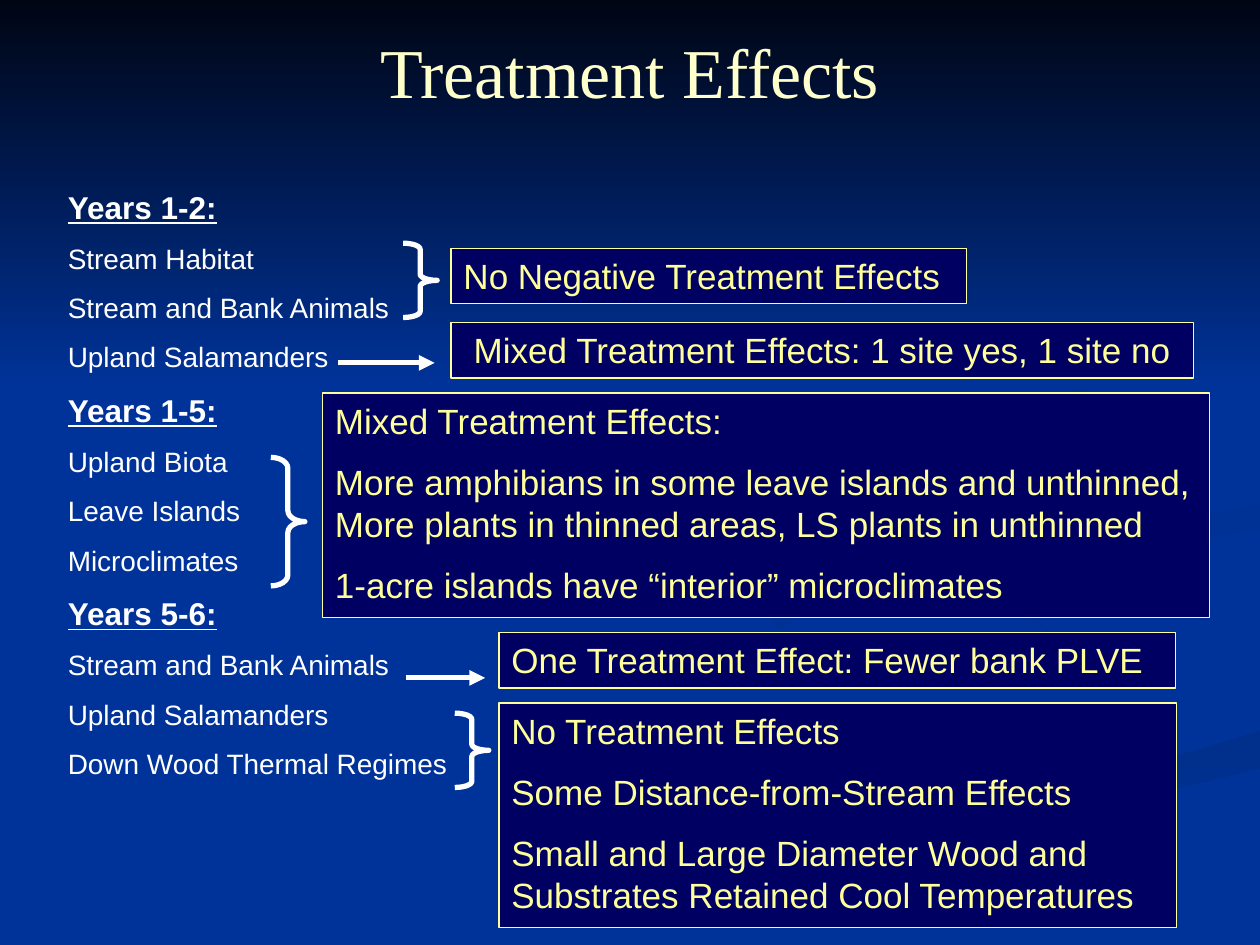
from dataclasses import dataclass

from lxml import etree
from pptx import Presentation
from pptx.dml.color import RGBColor
from pptx.enum.shapes import MSO_CONNECTOR as Link, MSO_SHAPE as Shape
from pptx.enum.text import MSO_ANCHOR as Anchor, PP_ALIGN as Align
from pptx.oxml.ns import qn
from pptx.util import Inches, Pt

BLUE, NAVY, WHITE = "003399", "000062", "FFFFFF"
CREAM, YELLOW = "FFFFCC", "FFFF99"


@dataclass
class Wave:
    start: str
    angle: int
    points: list


@dataclass
class Note:
    left: float
    top: float
    width: float
    height: float
    lines: list
    pad: float = 0.1


@dataclass
class Brace:
    left: float
    top: float
    height: float
    curve: float


@dataclass
class Arrow:
    left: float
    right: float
    y: float


@dataclass
class Group:
    head: str
    items: list


# Each wave fades from its start colour into the background blue
WAVES = [
    Wave("002F8C", 90, [(5, 7.5), (5.7, 7.5), (7.5, 6.7), (10, 6.1),
                        (10, 5.8), (8, 6.4), (6.3, 6.9)]),
    Wave("003091", 45, [(7.8, 4.6), (8.3, 5), (8.1, 4.7), (8.8, 4.4),
                        (10, 4.2), (10, 4), (8.5, 4.3)]),
    Wave("002F8E", 45, [(6.8, 4.3), (8.4, 4), (8.9, 3.4), (7.6, 2.3),
                        (8.9, 3.3), (8.4, 3.8), (5.8, 4.6), (6.2, 5)]),
    Wave("000514", 90, [(0, 0), (0, 3.08), (10, 3.08), (10, 0)]),
]

GROUPS = [
    Group("Years 1-2:", ["Stream Habitat", "Stream and Bank Animals",
                         "Upland Salamanders"]),
    Group("Years 1-5:", ["Upland Biota", "Leave Islands", "Microclimates"]),
    Group("Years 5-6:", ["Stream and Bank Animals", "Upland Salamanders",
                         "Down Wood Thermal Regimes"]),
]

LOW, TALL = 0.44, 1.78
NOTES = [
    Note(3.58, 1.97, 4.09, LOW, ["No Negative Treatment Effects"]),
    Note(3.58, 2.56, 5.89, LOW,
         ["Mixed Treatment Effects: 1 site yes, 1 site no"], 0.18),
    Note(2.56, 3.12, 7.04, TALL, [
        "Mixed Treatment Effects:",
        "More amphibians in some leave islands and unthinned, "
        "More plants in thinned areas, LS plants in unthinned",
        "1-acre islands have “interior” microclimates"]),
    Note(3.96, 5.02, 5.37, LOW, ["One Treatment Effect: Fewer bank PLVE"]),
    Note(3.96, 5.58, 5.38, TALL, [
        "No Treatment Effects",
        "Some Distance-from-Stream Effects",
        "Small and Large Diameter Wood and "
        "Substrates Retained Cool Temperatures"]),
]
BRACES = [Brace(3.2, 1.93, 0.59, 0.18), Brace(3.61, 5.66, 0.59, 0.18),
          Brace(2.15, 3.63, 1.02, 0.32)]
ARROWS = [Arrow(2.68, 3.45, 2.88), Arrow(3.22, 3.85, 5.38)]


def rgb(code: str) -> RGBColor:
    return RGBColor.from_string(code)


def stroke(shape, code: str, width: float) -> None:
    shape.line.color.rgb = rgb(code)
    shape.line.width = Pt(width)


def write(frame, index: int, text: str, size: int, code: str,
          face: str = "Arial", bold: bool = False):
    para = frame.add_paragraph() if index else frame.paragraphs[0]
    para.text = text
    para.alignment = Align.LEFT
    para.space_before = Pt(round(size * 0.55) if index else 0)
    font = para.font
    font.name, font.size, font.bold = face, Pt(size), bold
    font.underline = bold
    font.color.rgb = rgb(code)
    return para


def draw_wave(slide, wave: Wave) -> None:
    first, *rest = [(Inches(x), Inches(y)) for x, y in wave.points]
    pen = slide.shapes.build_freeform(*first)
    pen.add_line_segments(rest, close=True)
    shape = pen.convert_to_shape()
    shape.shadow.inherit = False
    shape.line.fill.background()
    shape.fill.gradient()
    shape.fill.gradient_angle = -wave.angle % 360
    for place, code in enumerate((wave.start, BLUE)):
        stop = shape.fill.gradient_stops[place]
        stop.color.rgb, stop.position = rgb(code), place


def draw_note(slide, note: Note) -> None:
    box = slide.shapes.add_shape(
        Shape.RECTANGLE, Inches(note.left), Inches(note.top),
        Inches(note.width), Inches(note.height))
    box.shadow.inherit = False
    box.fill.solid()
    box.fill.fore_color.rgb = rgb(NAVY)
    stroke(box, YELLOW, 0.75)
    frame = box.text_frame
    frame.word_wrap, frame.vertical_anchor = True, Anchor.TOP
    frame.margin_left = Inches(note.pad)
    for i, line in enumerate(note.lines):
        write(frame, i, line, 20, YELLOW)


def draw_brace(slide, brace: Brace) -> None:
    shape = slide.shapes.add_shape(
        Shape.RIGHT_BRACE, Inches(brace.left), Inches(brace.top),
        Inches(0.27), Inches(brace.height))
    shape.adjustments[0] = brace.curve
    shape.shadow.inherit = False
    shape.fill.background()
    stroke(shape, WHITE, 3)


def draw_arrow(slide, arrow: Arrow) -> None:
    y = Inches(arrow.y)
    link = slide.shapes.add_connector(
        Link.STRAIGHT, Inches(arrow.left), y, Inches(arrow.right), y)
    stroke(link, WHITE, 3)
    props = link._element.spPr
    etree.SubElement(props.find(qn("a:ln")), qn("a:tailEnd"), type="triangle")
    etree.SubElement(props, qn("a:effectLst"))


def main() -> None:
    deck = Presentation()
    deck.slide_width, deck.slide_height = Inches(10), Inches(7.5)
    slide = deck.slides.add_slide(deck.slide_layouts[6])

    # Background
    slide.background.fill.solid()
    slide.background.fill.fore_color.rgb = rgb(BLUE)
    for wave in WAVES:
        draw_wave(slide, wave)

    # Title
    frame = slide.shapes.add_textbox(
        Inches(0.5), Inches(0.22), Inches(9), Inches(0.68)).text_frame
    frame.word_wrap, frame.vertical_anchor = True, Anchor.MIDDLE
    title = write(frame, 0, "Treatment Effects", 40, CREAM, "Times New Roman")
    title.alignment = Align.CENTER

    # Study list
    frame = slide.shapes.add_textbox(
        Inches(0.44), Inches(1.44), Inches(3.3), Inches(4.91)).text_frame
    frame.word_wrap = True
    rows = [(text, text == group.head) for group in GROUPS
            for text in (group.head, *group.items)]
    for i, (text, head) in enumerate(rows):
        write(frame, i, text, 18 if head else 16, WHITE, bold=head)

    # Findings and their links
    for brace in BRACES:
        draw_brace(slide, brace)
    for arrow in ARROWS:
        draw_arrow(slide, arrow)
    for note in NOTES:
        draw_note(slide, note)

    deck.save("out.pptx")


if __name__ == "__main__":
    main()
